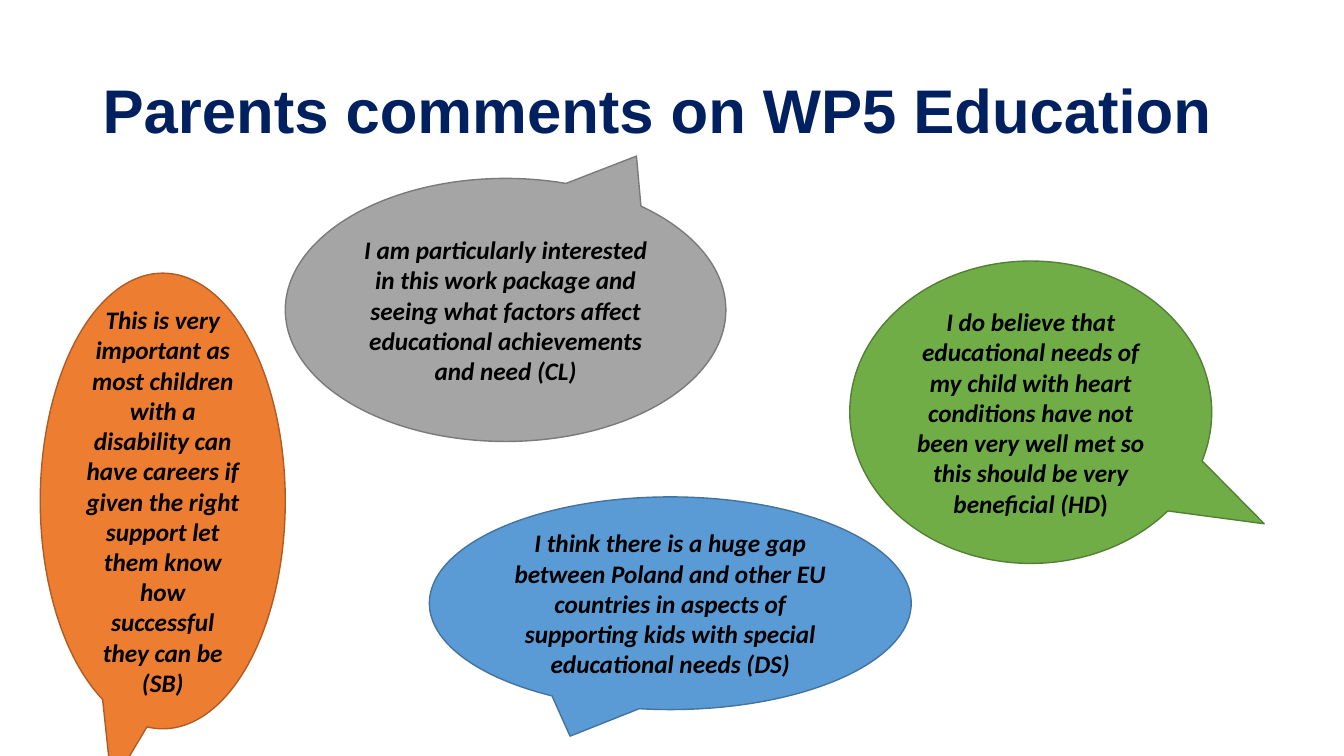
from dataclasses import dataclass

from pptx import Presentation
from pptx.dml.color import RGBColor as RGB
from pptx.enum.shapes import MSO_SHAPE as SHAPE
from pptx.enum.text import MSO_ANCHOR as ANCHOR, PP_ALIGN as ALIGN
from pptx.util import Inches, Pt


@dataclass(frozen=True)
class Theme:
    navy: str = "002060"
    black: str = "000000"
    grey: tuple = ("A5A5A5", "7A7A7A")
    green: tuple = ("70AD47", "538035")
    orange: tuple = ("ED7D31", "AF5C24")
    blue: tuple = ("5B9BD5", "43739E")
    title_font: str = "Arial"
    body_font: str = "Calibri"
    title_size: int = 44
    body_size: int = 18
    outline: int = 1


def add_run(p, text, *, font, size, color, bold=True, italic=False):
    r = p.add_run()
    r.text = text
    r.font.name = font
    r.font.size = Pt(size)
    r.font.color.rgb = RGB.from_string(color)
    r.font.bold = bold
    r.font.italic = italic
    return r


class CommentSlide:
    def __init__(self, prs, theme):
        self.prs = prs
        self.theme = theme
        self.s = prs.slides.add_slide(prs.slide_layouts[6])

    def box(self, left, top, width, height):
        x, y = self.prs.slide_width / 100, self.prs.slide_height / 100
        return round(left * x), round(top * y), round(width * x), round(height * y)

    def frame(self, sp, align):
        tf = sp.text_frame
        tf.word_wrap = True
        tf.vertical_anchor = ANCHOR.MIDDLE
        p = tf.paragraphs[0]
        p.alignment = align
        return p

    def title(self, text, place):
        t = self.theme
        sp = self.s.shapes.add_textbox(*self.box(*place))
        p = self.frame(sp, ALIGN.LEFT)
        p.line_spacing = 0.9
        add_run(p, text, font=t.title_font, size=t.title_size, color=t.navy)

    def bubble(self, text, place, colors, tail=(-0.208, 0.625), upright=""):
        t = self.theme
        fill, line = colors
        sp = self.s.shapes.add_shape(SHAPE.OVAL_CALLOUT, *self.box(*place))
        sp.adjustments[0], sp.adjustments[1] = tail
        sp.shadow.inherit = False
        sp.fill.solid()
        sp.fill.fore_color.rgb = RGB.from_string(fill)
        sp.line.color.rgb = RGB.from_string(line)
        sp.line.width = Pt(t.outline)
        p = self.frame(sp, ALIGN.CENTER)
        style = dict(font=t.body_font, size=t.body_size, color=t.black)
        add_run(p, text, italic=True, **style)
        if upright:
            add_run(p, upright, **style)


def main():
    prs = Presentation()
    prs.slide_width, prs.slide_height = Inches(13.33), Inches(7.5)
    theme = Theme()
    slide = CommentSlide(prs, theme)
    slide.title("Parents comments on WP5 Education", (6.9, 5.33, 86.25, 19.33))
    slide.bubble(
        "I am particularly interested in this work package and seeing what "
        "factors affect educational achievements and need (CL)",
        (21.23, 23.6, 32.78, 34.8), theme.grey, tail=(0.297, -0.585))
    slide.bubble(
        "I do believe that educational needs of my child with heart conditions "
        "have not been very well met so this should be very beneficial (HD",
        (63.23, 34.53, 26.93, 40), theme.green, tail=(0.645, 0.369), upright=")")
    slide.bubble(
        "This is very important as most children with a disability can have "
        "careers if given the right support let them know how successful they "
        "can be (SB)",
        (3, 36.13, 18.23, 60.27), theme.orange)
    slide.bubble(
        "I think there is a huge gap between Poland and other EU countries in "
        "aspects of supporting kids with special educational needs (DS)",
        (31.95, 65.73, 35.85, 28.13), theme.blue)
    prs.save("out.pptx")


if __name__ == "__main__":
    main()
